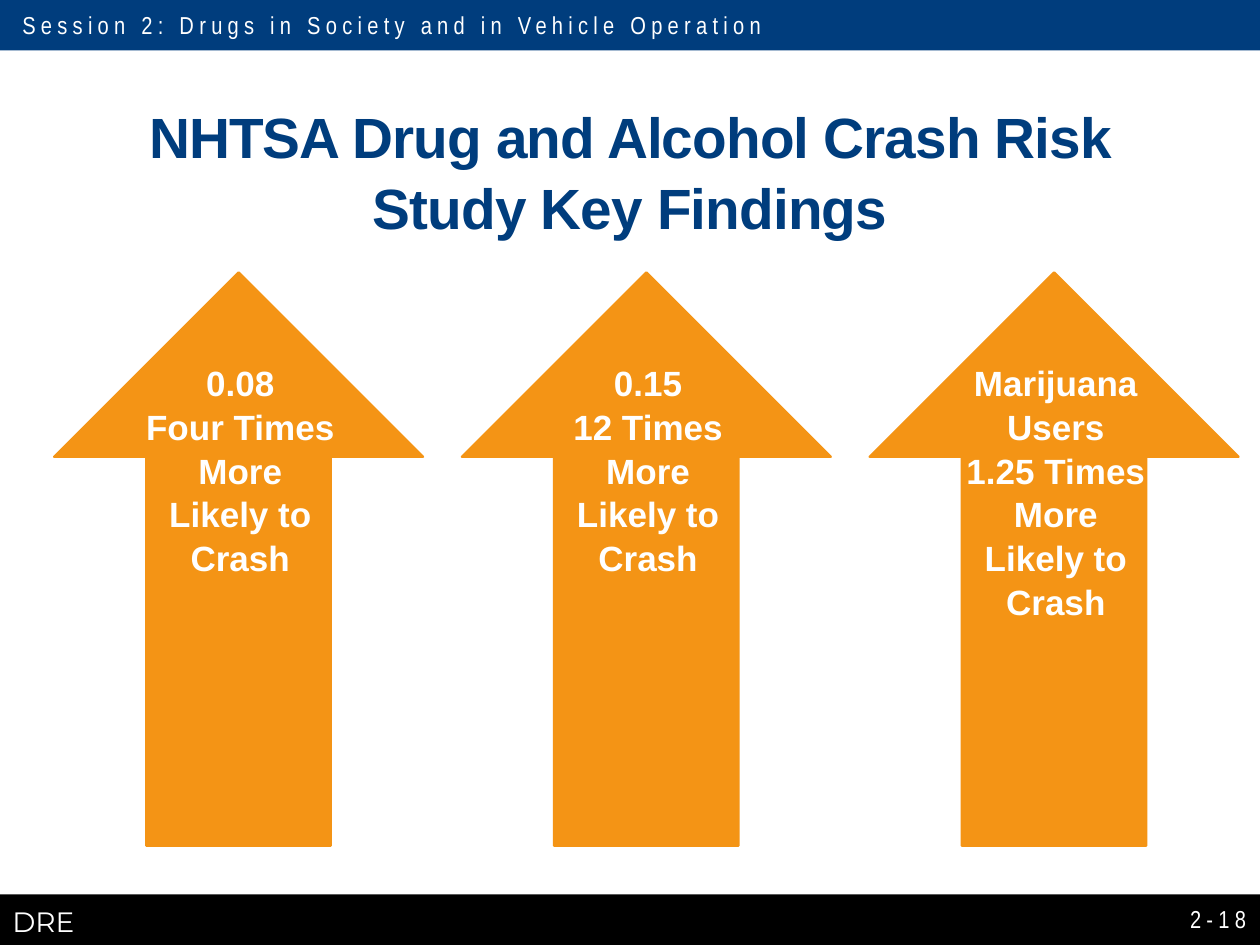
from pptx import Presentation
from pptx.dml.color import RGBColor
from pptx.enum import shapes, text
from pptx.util import Cm, Pt

NAVY = RGBColor(0x00, 0x3D, 0x7D)
ORANGE = RGBColor(0xF4, 0x94, 0x15)
BLACK = RGBColor(0, 0, 0)
WHITE = RGBColor(255, 255, 255)
LEFT, MID, RIGHT = text.PP_ALIGN.LEFT, text.PP_ALIGN.CENTER, text.PP_ALIGN.RIGHT
TOP, MIDDLE = text.MSO_ANCHOR.TOP, text.MSO_ANCHOR.MIDDLE


def solid(parent, kind, box, color):
    shape = parent.add_shape(kind, *map(Cm, box))
    shape.shadow.inherit = False
    shape.fill.solid()
    shape.fill.fore_color.rgb = color
    shape.line.fill.background()
    return shape


def write(parent, box, lines, size, font="Arial", color=WHITE, bold=False,
          align=LEFT, anchor=TOP, track=0, lead=None, wrap=True, grow=False):
    frame = parent.add_textbox(*map(Cm, box)).text_frame
    frame.word_wrap = wrap
    frame.vertical_anchor = anchor
    if grow:
        frame.auto_size = text.MSO_AUTO_SIZE.SHAPE_TO_FIT_TEXT
    for i, line in enumerate(lines):
        para = frame.add_paragraph() if i else frame.paragraphs[0]
        para.alignment = align
        para.line_spacing = lead
        run = para.add_run()
        run.text = line
        run.font.name = font
        run.font.size = Pt(size)
        run.font.bold = bold
        run.font.color.rgb = color
        if track:
            run.font._element.set("spc", str(track))


def header(parent, box):
    x, y, w, h = box
    solid(parent, shapes.MSO_SHAPE.RECTANGLE, box, NAVY)
    write(parent, (x + 0.2, y + 0.08, 15.65, 0.86),
          ["Session 2: Drugs in Society and in Vehicle Operation"],
          14, "Arial Narrow", track=300, wrap=False, grow=True)


def footer(parent, box):
    x, y, w, h = box
    solid(parent, shapes.MSO_SHAPE.RECTANGLE, box, BLACK)
    write(parent, (x, y + 0.08, 4.75, 0.94), ["DRE"], 16, "Montserrat", grow=True)
    write(parent, (x + w - 4.78, y - 0.02, 4.75, 1.02), ["2-18"],
          14, "Arial Narrow", align=RIGHT, anchor=MIDDLE, track=300)


def title(parent, box):
    write(parent, box, ["NHTSA Drug and Alcohol Crash Risk Study Key Findings"],
          32.4, color=NAVY, bold=True, align=MID, anchor=MIDDLE, track=-50, lead=1.04)


def arrow(parent, box, lines, tall):
    x, y, w, h = box
    group = parent.add_group_shape().shapes
    shape = solid(group, shapes.MSO_SHAPE.UP_ARROW, box, ORANGE)
    shape.line.color.rgb = ORANGE
    shape.line.width = Pt(1.25)
    write(group, (x + 1.57, y + 1.65, 4.37, tall), lines, 20,
          bold=True, align=MID, lead=1.04, grow=True)


def main():
    deck = Presentation()
    deck.slide_width, deck.slide_height = Cm(25.4), Cm(19.05)
    parts = deck.slides.add_slide(deck.slide_layouts[6]).shapes
    footer(parts, (0, 18.03, 25.4, 1.02))
    header(parts, (0, 0, 25.4, 1.02))
    title(parts, (1.27, 1.8, 22.86, 3.25))
    risks = [
        ("0.08", "Four Times", 4.52),
        ("0.15", "12 Times", 4.52),
        ("Marijuana Users", "1.25 Times", 5.38),
    ]
    for i, (group, times, tall) in enumerate(risks):
        arrow(parts, (1.09 + 8.22 * i, 5.49, 7.44, 11.56),
              [group, times, "More Likely to Crash"], tall)
    deck.save("out.pptx")


if __name__ == "__main__":
    main()
